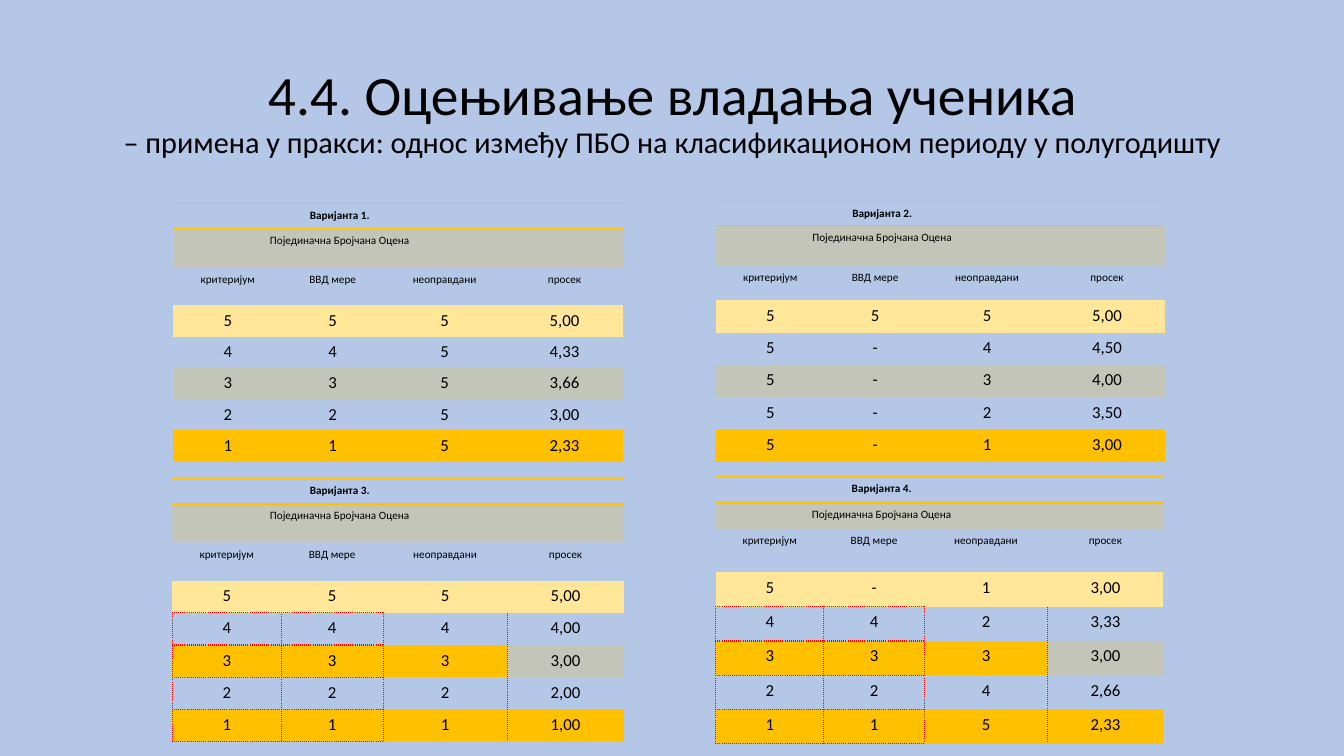
from lxml import etree
from pptx import Presentation
from pptx.dml.color import RGBColor
from pptx.enum import text as t
from pptx.oxml import ns
from pptx.util import Inches, Pt

HUES = {"back": "B4C7E7", "ink": "000000", "gold": "FFC000",
        "cream": "FFE699", "red": "FF0000"}
HEADS = ["критеријум", "ВВД мере", "неоправдани", "просек"]
PLAIN = "{2D5ABB26-0587-4C30-8999-92F81FD0307C}"

# name, left, top, column widths, row heights, dotted block, grades
TABLES = [
    ("Варијанта 1.", 1.72, 2.02, [1.08, 1, 1.22, 1.16],
     [0.25, 0.39, 0.37] + [0.31] * 5, False,
     ["5 5 5 5,00", "4 4 5 4,33", "3 3 5 3,66", "2 2 5 3,00", "1 1 5 2,33"]),
    ("Варијанта 2.", 7.1, 2, [1.08, 1, 1.22, 1.16],
     [0.24, 0.4, 0.34] + [0.32] * 5, False,
     ["5 5 5 5,00", "5 - 4 4,50", "5 - 3 4,00", "5 - 2 3,50", "5 - 1 3,00"]),
    ("Варијанта 3.", 1.71, 4.75, [1.08, 1.01, 1.23, 1.16],
     [0.25, 0.38, 0.38] + [0.32] * 5, True,
     ["5 5 5 5,00", "4 4 4 4,00", "3 3 3 3,00", "2 2 2 2,00", "1 1 1 1,00"]),
    ("Варијанта 4.", 7.1, 4.73, [1.07, 1, 1.22, 1.15],
     [0.26, 0.26, 0.43] + [0.34] * 5, True,
     ["5 - 1 3,00", "4 4 2 3,33", "3 3 3 3,00", "2 2 4 2,66", "1 1 5 2,33"]),
]


def color(name):
    return RGBColor.from_string(HUES[name])


def add(parent, tag, **attrs):
    return etree.SubElement(parent, ns.qn(tag), **attrs)


def write(para, words, size, bold=False, space=None):
    """Put centred text in a paragraph; an empty one keeps the size."""
    para.alignment = t.PP_ALIGN.CENTER
    if space:
        para.line_spacing = space
    if not words:
        add(para._p, "a:endParaRPr", sz=str(size * 100))
        return
    run = para.add_run()
    run.text = words
    run.font.name = "Calibri"
    run.font.size = Pt(size)
    run.font.bold = bold
    run.font.color.rgb = color("ink")


def border(cell, sides):
    """Draw 1 pt edges: sides maps L, R, T, B to a colour name."""
    props = cell._tc.get_or_add_tcPr()
    for side in "LRTB":
        if side in sides:
            line = add(props, "a:ln" + side, w=str(Pt(1)))
            name = sides[side]
            add(add(line, "a:solidFill"), "a:srgbClr", val=HUES[name])
            add(line, "a:prstDash", val="sysDot" if name == "red" else "solid")


def paint(cell, row):
    """Cream for the first grade row, faint gold for the other odd rows."""
    if row % 2 == 0:
        cell.fill.background()
        return
    cell.fill.solid()
    cell.fill.fore_color.rgb = color("cream" if row == 3 else "gold")
    if row != 3:
        hue = cell._tc.tcPr.find(".//" + ns.qn("a:srgbClr"))
        add(hue, "a:alpha", val="20000")


def edges(row, col, last, dotted):
    sides = {}
    if row == 0:
        sides = {"T": "gold", "B": "gold"}
    elif row == last:
        sides = {"B": "gold"}
    if dotted and row == 3 and col < 2:
        sides["B"] = "red"
    elif dotted and row > 3 and col < 2:
        sides = dict.fromkeys("LRTB", "red")
    elif dotted and row > 3 and col == 2:
        sides["L"] = "red"
    return sides


def grid(slide, name, left, top, widths, heights, dotted, grades):
    rows = [[name, "", "", ""], ["Појединачна Бројчана Оцена", "", "", ""], HEADS]
    rows += [line.split() for line in grades]
    frame = slide.shapes.add_table(
        len(rows), len(widths), Inches(left), Inches(top),
        Inches(sum(widths)), Inches(sum(heights)))
    table = frame.table
    table.first_row = table.horz_banding = False
    table._tbl.tblPr.find(ns.qn("a:tableStyleId")).text = PLAIN
    for col, width in zip(table.columns, widths):
        col.width = Inches(width)
    for row, height in zip(table.rows, heights):
        row.height = Inches(height)
    for r, line in enumerate(rows):
        for c, words in enumerate(line):
            cell = table.cell(r, c)
            write(cell.text_frame.paragraphs[0], words,
                  size=8 if r < 3 else 12, bold=r == 0)
            border(cell, edges(r, c, len(rows) - 1, dotted))
            paint(cell, r)
    for r in range(2):
        table.cell(r, 0).merge(table.cell(r, 2))


def head(slide):
    title = slide.shapes.title
    title.left, title.top = Inches(0.92), Inches(0.4)
    title.width, title.height = Inches(11.5), Inches(1.45)
    frame = title.text_frame
    frame.word_wrap = True
    frame.auto_size = t.MSO_AUTO_SIZE.NONE
    frame.vertical_anchor = t.MSO_ANCHOR.MIDDLE
    write(frame.paragraphs[0], "4.4. Оцењивање владања ученика", 39.6, space=0.9)
    write(frame.add_paragraph(), "– примена у пракси: однос између ПБО на "
          "класификационом периоду у полугодишту", 21.6, space=0.9)


def main():
    deck = Presentation()
    deck.slide_width, deck.slide_height = Inches(13.33), Inches(7.5)
    slide = deck.slides.add_slide(deck.slide_layouts[5])
    slide.background.fill.solid()
    slide.background.fill.fore_color.rgb = color("back")
    head(slide)
    for item in TABLES:
        grid(slide, *item)
    deck.save("out.pptx")


if __name__ == "__main__":
    main()
